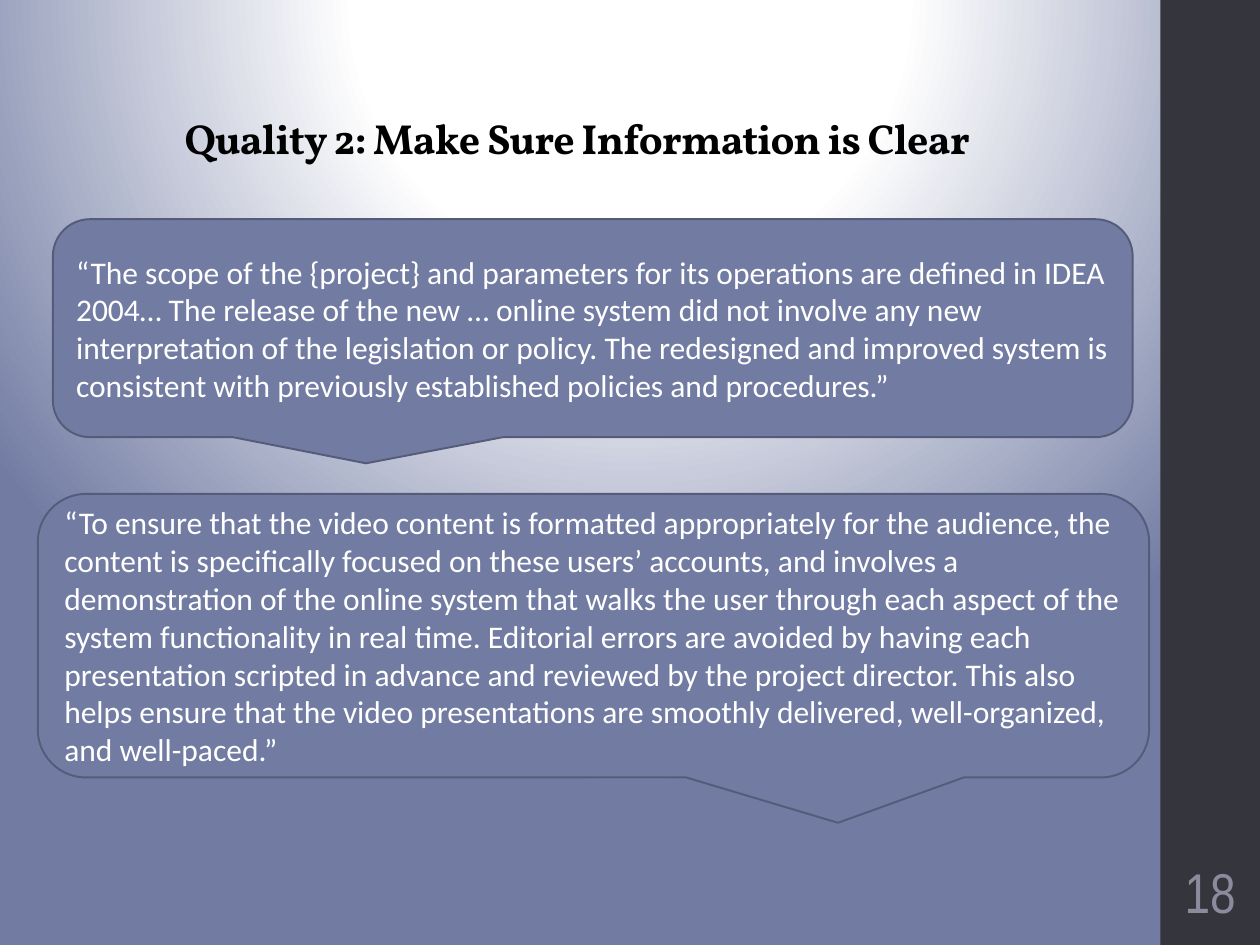
from lxml import etree
from pptx import Presentation
from pptx.dml.color import RGBColor
from pptx.enum import shapes, text
from pptx.oxml import parse_xml
from pptx.oxml.ns import nsdecls
from pptx.util import Inches, Pt

COLORS = {"slate": "727CA3", "edge": "545C79", "band": "35353E",
          "number": "8B8B9D", "white": "FFFFFF", "black": "000000"}


def rgb(name):
    return RGBColor.from_string(COLORS[name])


def write(tf, words, anchor, align, **fmt):
    tf.word_wrap = True
    tf.vertical_anchor = anchor
    p = tf.paragraphs[0]
    p.alignment = align
    r = p.add_run()
    r.text = words
    r.font.color.rgb = rgb(fmt.pop("color"))
    for key, value in fmt.items():
        setattr(r.font, key, value)
    return p, r


MIDDLE, BOTTOM = text.MSO_ANCHOR.MIDDLE, text.MSO_ANCHOR.BOTTOM
LEFT, CENTER = text.PP_ALIGN.LEFT, text.PP_ALIGN.CENTER

prs = Presentation()
prs.slide_width, prs.slide_height = Inches(10), Inches(7.5)
s = prs.slides.add_slide(prs.slide_layouts[5])

stops = "".join(
    f'<a:gs pos="{pos * 1000}"><a:srgbClr val="{COLORS[name]}"/></a:gs>'
    for pos, name in [(0, "white"), (35, "white"), (100, "slate")])
s.element.cSld.insert(0, parse_xml(
    f'<p:bg {nsdecls("p", "a")}><p:bgPr><a:gradFill rotWithShape="1">'
    f'<a:gsLst>{stops}</a:gsLst><a:path path="circle">'
    '<a:fillToRect l="50000" t="-80000" r="50000" b="180000"/></a:path>'
    '</a:gradFill><a:effectLst/></p:bgPr></p:bg>'))

band = s.shapes.add_shape(shapes.MSO_SHAPE.RECTANGLE, Inches(9.21), 0,
                          Inches(0.8), prs.slide_height)
band.shadow.inherit = False
band.fill.solid()
band.fill.fore_color.rgb = rgb("band")
band.line.fill.background()

title = s.shapes.title
title.left, title.top, title.width, title.height = map(Inches, (0.58, 0.33, 8, 1.02))
p, r = write(title.text_frame, "Quality 2: Make Sure Information is Clear", BOTTOM,
             CENTER, size=Pt(24), name="Vollkorn", bold=True, color="black")
title.text_frame.auto_size = text.MSO_AUTO_SIZE.NONE
p.line_spacing = 0.9
r.font._element.set("spc", "-50")

quotes = [
    ((0.42, 1.74, 8.57, 1.73), (-0.21, 0.62, 0.17),
     "“The scope of the {project} and parameters for its operations are defined in "
     "IDEA 2004… The release of the new … online system did not involve any new "
     "interpretation of the legislation or policy. The redesigned and improved system "
     "is consistent with previously established policies and procedures.”"),
    ((0.3, 3.92, 8.82, 2.25), (0.22, 0.66, 0.17),
     "“To ensure that the video content is formatted appropriately for the audience, "
     "the content is specifically focused on these users’ accounts, and involves a "
     "demonstration of the online system that walks the user through each aspect of "
     "the system functionality in real time. Editorial errors are avoided by having "
     "each presentation scripted in advance and reviewed by the project director. "
     "This also helps ensure that the video presentations are smoothly delivered, "
     "well-organized, and well-paced.”"),
]
for box, adjustments, words in quotes:
    sp = s.shapes.add_shape(shapes.MSO_SHAPE.ROUNDED_RECTANGULAR_CALLOUT,
                            *map(Inches, box))
    for i, value in enumerate(adjustments):
        sp.adjustments[i] = value
    sp.shadow.inherit = False
    sp.fill.solid()
    sp.fill.fore_color.rgb = rgb("slate")
    sp.line.color.rgb = rgb("edge")
    sp.line.width = Pt(1.1)
    write(sp.text_frame, words, MIDDLE, LEFT,
          size=Pt(18), name="Calibri", color="white")

number = s.shapes.add_textbox(*map(Inches, (9.23, 6.75, 0.75, 0.65)))
tf = number.text_frame
tf.margin_left = tf.margin_right = Inches(0.03)
write(tf, "18", MIDDLE, CENTER, size=Pt(32), name="Arial Narrow", color="number")

prs.save("out.pptx")
